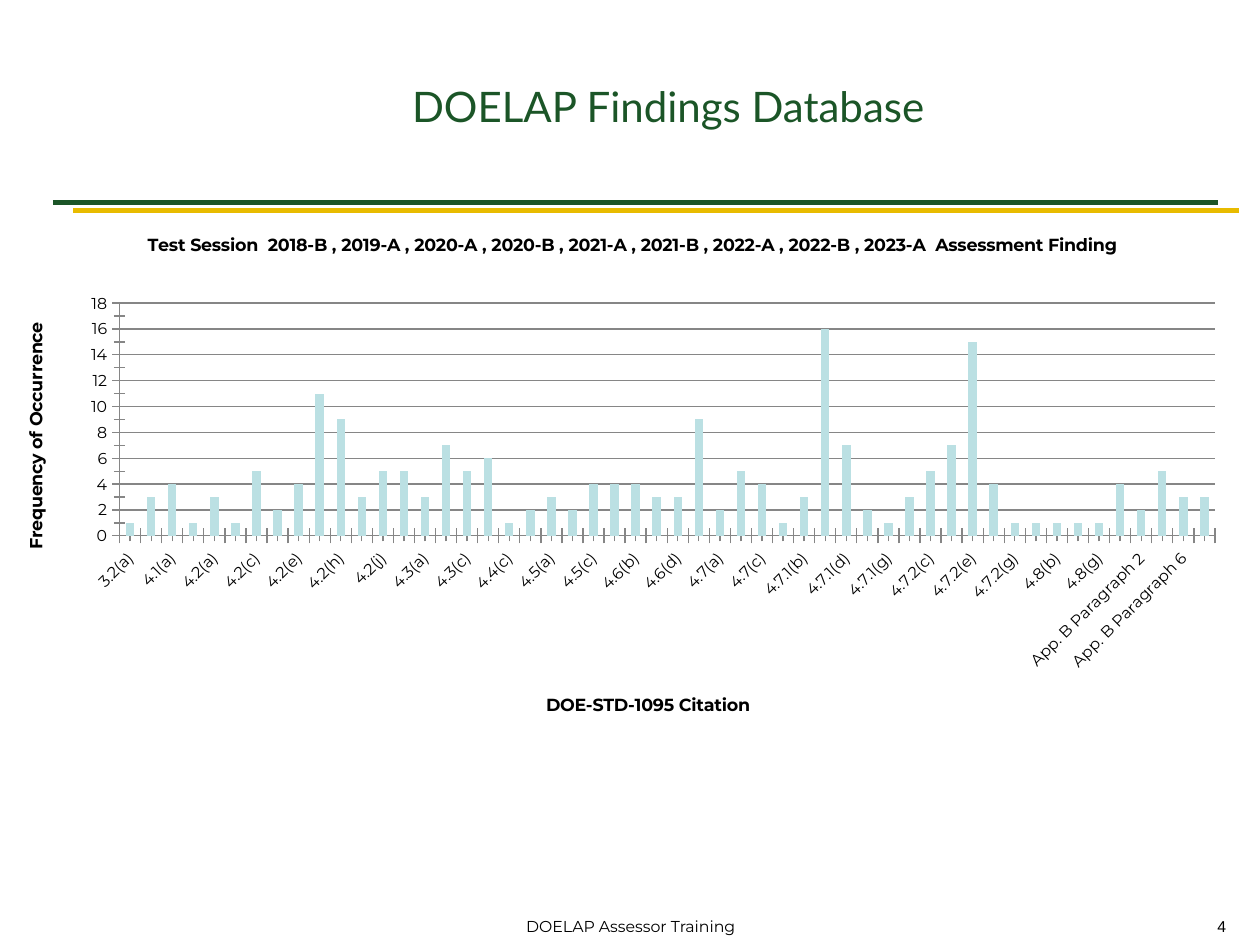
from lxml import etree
from pptx import Presentation
from pptx import util as u
from pptx.chart.data import CategoryChartData
from pptx.dml.color import RGBColor
from pptx.enum import chart as kinds, shapes, text
from pptx.oxml import parse_xml
from pptx.oxml.ns import nsdecls, qn

GREEN, GOLD, BLACK, GREY, PALE_BLUE = "1B5527", "E8BB00", "000000", "868686", "BBE0E3"

deck = Presentation()
deck.slide_width, deck.slide_height = u.Inches(10), u.Inches(7.5)
page = deck.slides.add_slide(deck.slide_layouts[5])


def write(frame, words, size, font="Montserrat", color=BLACK, bold=False,
          align=text.PP_ALIGN.LEFT, anchor=None):
    """Put one formatted paragraph in a text frame."""
    frame.word_wrap = True
    if anchor is not None:
        frame.vertical_anchor = anchor
    para = frame.paragraphs[0]
    para.alignment = align
    span = para.add_run()
    span.text = words
    span.font.size, span.font.name, span.font.bold = u.Pt(size), font, bold
    span.font.color.rgb = RGBColor.from_string(color)


def place(parent, before, left, top, width=None, height=None):
    """Fix a chart part at shares of the chart's size."""
    for old in parent.findall(qn("c:layout")):
        parent.remove(old)
    target = '<c:layoutTarget val="inner"/>' if width else ""
    size = f'<c:w val="{width}"/><c:h val="{height}"/>' if width else ""
    layout = parse_xml(
        f'<c:layout {nsdecls("c")}><c:manualLayout>{target}'
        '<c:xMode val="edge"/><c:yMode val="edge"/>'
        f'<c:x val="{left}"/><c:y val="{top}"/>{size}</c:manualLayout></c:layout>')
    if before is None:
        parent.insert(0, layout)
    else:
        parent.find(qn(before)).addnext(layout)


# Title
title = page.shapes.title
title.left, title.top, title.width, title.height = map(u.Inches, (3.17, 0.17, 6.33, 1.33))
write(title.text_frame, "DOELAP Findings Database", 24, font="Lato", color=GREEN,
      anchor=text.MSO_ANCHOR.MIDDLE)

# Double rule under the title
for left, top, color in ((0.42, 1.61, GREEN), (0.58, 1.67, GOLD)):
    rule = page.shapes.add_connector(
        shapes.MSO_CONNECTOR.STRAIGHT, *map(u.Inches, (left, top, left + 9.25, top)))
    rule.line.color.rgb = RGBColor.from_string(color)
    rule.line.width = u.Pt(3)
    etree.SubElement(rule._element.spPr, qn("a:effectLst"))

# Footer and page number
for left, width, words, font, align in (
        (3.42, 3.17, "DOELAP Assessor Training", "Montserrat", text.PP_ALIGN.CENTER),
        (7.83, 2, "4", "Arial", text.PP_ALIGN.RIGHT)):
    box = page.shapes.add_textbox(*map(u.Inches, (left, 7.23, width, 0.25)))
    write(box.text_frame, words, 9, font=font, align=align)

# Findings by citation: section prefix, then (clause, count) pairs
sections = {
    "3.2": "a1 f3", "4.1": "a4 b1", "4.2": "a3 b1 c5 d2 e4 g11 h9 i3 j5 k5",
    "4.3": "a3 b7 c5", "4.4": "b6 c1 e2", "4.5": "a3 b2 c4", "4.6": "a4 b4 c3 d3 f9",
    "4.7": "a2 b5 c4", "4.7.1": "a1 b3 c16 d7 e2 g1", "4.7.2": "b3 c5 d7 e15 f4 g1",
    "4.7.3": 1, "4.8": "b1 f1 g1", "4.9": 4, "App. B Paragraph 2": 2,
    "App. B Paragraph 5": 5, "App. B Paragraph 6": 3, "App. B Pararagraph 3": 3,
}
findings = {}
for section, counts in sections.items():
    if isinstance(counts, int):
        findings[section] = counts
    else:
        for item in counts.split():
            findings[f"{section}({item[0]})"] = int(item[1:])

data = CategoryChartData()
data.categories = list(findings)
data.add_series("Series 1", list(findings.values()))
chart = page.shapes.add_chart(
    kinds.XL_CHART_TYPE.COLUMN_CLUSTERED,
    *map(u.Inches, (0.06, 1.65, 9.88, 4.2)), data).chart
chart.has_legend = False
chart.font.name, chart.font.size = "Montserrat", u.Pt(10)
chart.font.color.rgb = RGBColor.from_string(BLACK)

# Columns
plot = chart.plots[0]
plot.gap_width, plot.vary_by_categories = 150, False
fill = plot.series[0].format.fill
fill.solid()
fill.fore_color.rgb = RGBColor.from_string(PALE_BLUE)

# Axes
citations, frequency = chart.category_axis, chart.value_axis
for axis in (citations, frequency):
    axis.major_tick_mark = axis.minor_tick_mark = kinds.XL_TICK_MARK.CROSS
    axis.tick_labels.font.size = u.Pt(9)
    axis.tick_labels.font.name = "Montserrat"
    axis.format.line.color.rgb = RGBColor.from_string(GREY)
frequency.minimum_scale, frequency.maximum_scale = 0, 18
frequency.major_unit, frequency.minor_unit = 2, 1
frequency.has_major_gridlines = True
frequency.major_gridlines.format.line.color.rgb = RGBColor.from_string(GREY)
citations._element.txPr.find(qn("a:bodyPr")).set("rot", "-2700000")

# Chart and axis titles
for owner, words, align, left, top in (
        (chart, "Test Session  2018-B , 2019-A , 2020-A , 2020-B , 2021-A , 2021-B , "
                "2022-A , 2022-B , 2023-A  Assessment Finding",
         text.PP_ALIGN.CENTER, 0.11, 0.04),
        (citations, "DOE-STD-1095 Citation", text.PP_ALIGN.CENTER, 0.43, 0.91),
        (frequency, "Frequency of Occurrence", text.PP_ALIGN.CENTER, 0.01, 0.21)):
    owner.has_title = True
    heading = owner.chart_title if owner is chart else owner.axis_title
    write(heading.text_frame, words, 10, bold=True, align=align)
    place(heading._element, "c:tx", left, top)
    if owner is frequency:
        heading.text_frame._txBody.find(qn("a:bodyPr")).set("rot", "-5400000")
chart.chart_title.include_in_layout = False
place(plot._element.getparent(), None, 0.09, 0.18, 0.88, 0.44)

deck.save("out.pptx")
